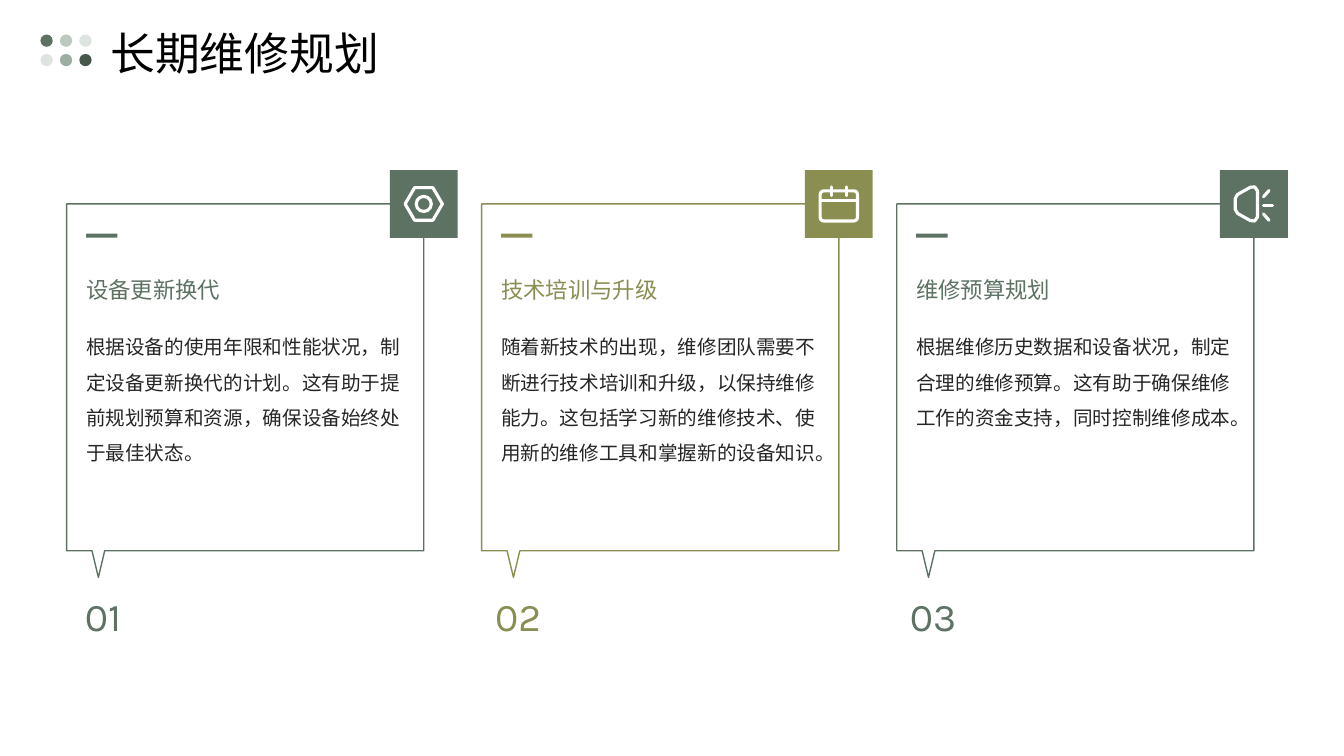
import pptx
import pptx.util
from lxml import etree
from pptx.dml.color import RGBColor
from pptx.enum.shapes import MSO_CONNECTOR, MSO_SHAPE
from pptx.enum.text import MSO_ANCHOR, MSO_AUTO_SIZE, PP_ALIGN
from pptx.oxml.ns import qn
from pptx.util import Cm

GREEN = RGBColor(0x5E, 0x72, 0x64)
OLIVE = RGBColor(0x8A, 0x8E, 0x50)
SAGE = RGBColor(0x9C, 0xAD, 0xA1)
MIST = RGBColor(0xBD, 0xC8, 0xC0)
PALE = RGBColor(0xDE, 0xE4, 0xE0)
FOREST = RGBColor(0x46, 0x56, 0x4B)
INK = RGBColor(0x26, 0x26, 0x26)
BLACK = RGBColor(0, 0, 0)
WHITE = RGBColor(0xFF, 0xFF, 0xFF)
CHINESE_FONT = "Noto Sans CJK SC"
NUMBER_FONT = "Karla"


def write(box, wording, size, color, spacing, font=CHINESE_FONT,
          align=PP_ALIGN.LEFT, anchor=MSO_ANCHOR.TOP):
    frame = box.text_frame
    frame.word_wrap = True
    frame.auto_size = MSO_AUTO_SIZE.NONE
    frame.vertical_anchor = anchor
    frame.margin_left = frame.margin_right = 0
    frame.margin_top = frame.margin_bottom = 0
    paragraph = frame.paragraphs[0]
    paragraph.alignment = align
    paragraph.line_spacing = spacing
    run = paragraph.add_run()
    run.text = wording
    run.font.name = font
    run.font.size = pptx.util.Pt(size)
    run.font.color.rgb = color
    east_asian = etree.SubElement(run.font._element, qn("a:ea"))
    east_asian.set("typeface", font)


def paint(shape, fill, line=None, weight=1):
    shape.shadow.inherit = False
    if fill is None:
        shape.fill.background()
    else:
        shape.fill.solid()
        shape.fill.fore_color.rgb = fill
    if line is None:
        shape.line.fill.background()
    else:
        shape.line.color.rgb = line
        shape.line.width = pptx.util.Pt(weight)


deck = pptx.Presentation()
deck.slide_width, deck.slide_height = Cm(33.87), Cm(19.05)
slide = deck.slides.add_slide(deck.slide_layouts[5])
shapes = slide.shapes

title = shapes.title
title.left, title.top, title.width, title.height = Cm(2.78), Cm(0.6), Cm(30.07), Cm(1.2)
write(title, "长期维修规划", 32, BLACK, 1.2, anchor=MSO_ANCHOR.MIDDLE)

for index, color in enumerate([GREEN, MIST, PALE, PALE, SAGE, FOREST]):
    row, column = divmod(index, 3)
    dot = shapes.add_shape(MSO_SHAPE.OVAL, Cm(1.02 + 0.49 * column),
                           Cm(0.87 + 0.49 * row), Cm(0.31), Cm(0.31))
    paint(dot, color)

CARD_TOP, CARD_WIDTH, CARD_HEIGHT, CARD_PITCH = 5.14, 9, 8.74, 10.46
TAIL_TIP = 9.41
BADGE = 1.71

nut = {
    "outlines": [[(-0.47, 0), (-0.23, -0.41), (0.23, -0.41),
                  (0.47, 0), (0.23, 0.41), (-0.23, 0.41)]],
    "presets": [(MSO_SHAPE.OVAL, -0.19, -0.19, 0.38, 0.38)],
    "strokes": [],
}
calendar = {
    "outlines": [],
    "presets": [(MSO_SHAPE.ROUNDED_RECTANGLE, -0.47, -0.33, 0.94, 0.76)],
    "strokes": [(-0.47, -0.08, 0.47, -0.08),
                (-0.19, -0.43, -0.19, -0.21), (0.19, -0.43, 0.19, -0.21)],
}
horn = {
    "outlines": [[(-0.47, -0.14), (-0.41, -0.24), (-0.09, -0.42), (0.02, -0.43),
                  (0.09, -0.33), (0.09, 0.33), (0.02, 0.43), (-0.09, 0.42),
                  (-0.41, 0.24), (-0.47, 0.14)]],
    "presets": [],
    "strokes": [(0.24, -0.18, 0.38, -0.34), (0.24, 0.03, 0.47, 0.03),
                (0.24, 0.25, 0.38, 0.41)],
}

plans = [
    ("设备更新换代",
     "根据设备的使用年限和性能状况，制定设备更新换代的计划。这有助于提前规划预算和资源，确保设备始终处于最佳状态。",
     GREEN, nut),
    ("技术培训与升级",
     "随着新技术的出现，维修团队需要不断进行技术培训和升级，以保持维修能力。这包括学习新的维修技术、使用新的维修工具和掌握新的设备知识。",
     OLIVE, calendar),
    ("维修预算规划",
     "根据维修历史数据和设备状况，制定合理的维修预算。这有助于确保维修工作的资金支持，同时控制维修成本。",
     GREEN, horn),
]

for index, (heading, detail, color, icon) in enumerate(plans):
    left = 1.68 + CARD_PITCH * index
    corner = left + CARD_WIDTH
    inner = left + 0.49

    card_path = shapes.build_freeform(Cm(left), Cm(CARD_TOP))
    card_path.add_line_segments(
        [(Cm(left + x), Cm(CARD_TOP + y)) for x, y in [
            (CARD_WIDTH, 0), (CARD_WIDTH, CARD_HEIGHT), (0.96, CARD_HEIGHT),
            (0.8, TAIL_TIP), (0.64, CARD_HEIGHT), (0, CARD_HEIGHT)]])
    paint(card_path.convert_to_shape(), WHITE, color)

    detail_box = shapes.add_textbox(Cm(inner), Cm(8.15), Cm(8), Cm(5.05))
    write(detail_box, detail, 14, INK, 1.5)

    number_box = shapes.add_textbox(Cm(left), Cm(14.58), Cm(1.83), Cm(1.32))
    write(number_box, f"{index + 1:02d}", 28, color, 1.3, NUMBER_FONT, PP_ALIGN.CENTER)

    badge = shapes.add_shape(MSO_SHAPE.RECTANGLE, Cm(corner - BADGE / 2),
                             Cm(CARD_TOP - BADGE / 2), Cm(BADGE), Cm(BADGE))
    paint(badge, color)

    for points in icon["outlines"]:
        corners = [(Cm(corner + x), Cm(CARD_TOP + y)) for x, y in points]
        outline_path = shapes.build_freeform(*corners[0])
        outline_path.add_line_segments(corners[1:])
        paint(outline_path.convert_to_shape(), None, WHITE, 2.25)
    for preset, x, y, width, height in icon["presets"]:
        part = shapes.add_shape(preset, Cm(corner + x), Cm(CARD_TOP + y),
                                Cm(width), Cm(height))
        if preset == MSO_SHAPE.ROUNDED_RECTANGLE:
            part.adjustments[0] = 0.12
        paint(part, None, WHITE, 2.25)
    for x1, y1, x2, y2 in icon["strokes"]:
        stroke = shapes.add_connector(
            MSO_CONNECTOR.STRAIGHT, Cm(corner + x1), Cm(CARD_TOP + y1),
            Cm(corner + x2), Cm(CARD_TOP + y2))
        stroke.line.color.rgb = WHITE
        stroke.line.width = pptx.util.Pt(2.25)
        properties = stroke._element.spPr
        properties.find(qn("a:ln")).set("cap", "rnd")
        etree.SubElement(properties, qn("a:effectLst"))

    accent = shapes.add_shape(MSO_SHAPE.RECTANGLE, Cm(inner), Cm(5.89), Cm(0.79), Cm(0.1))
    paint(accent, color)

    heading_box = shapes.add_textbox(Cm(inner), Cm(6.3), Cm(8), Cm(1.8))
    write(heading_box, heading, 16, color, 1.3, anchor=MSO_ANCHOR.MIDDLE)

deck.save("out.pptx")
